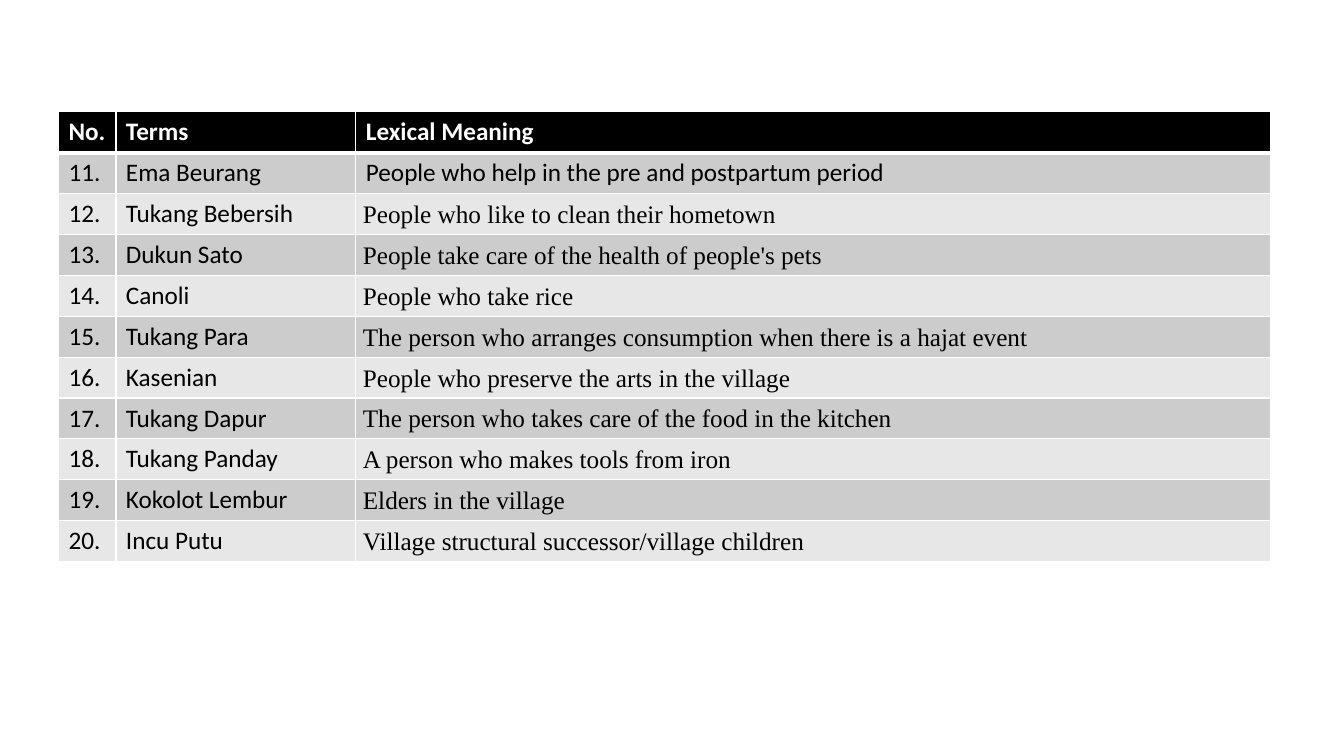
from lxml import etree
from pptx import Presentation
from pptx.dml.color import RGBColor
from pptx.enum.text import MSO_ANCHOR
from pptx.oxml.ns import qn
from pptx.util import Inches, Pt

MIDDLE, TOP = MSO_ANCHOR.MIDDLE, MSO_ANCHOR.TOP
BLACK = RGBColor(0x00, 0x00, 0x00)
WHITE = RGBColor(0xFF, 0xFF, 0xFF)
DARK_BAND = RGBColor(0xCC, 0xCC, 0xCC)
LIGHT_BAND = RGBColor(0xE7, 0xE7, 0xE7)

SLIDE_WIDTH, SLIDE_HEIGHT = Inches(13.33), Inches(7.5)
GLOSSARY_LEFT, GLOSSARY_TOP = Inches(0.58), Inches(1.11)
COLUMN_WIDTHS = [Inches(0.57), Inches(2.38), Inches(9.07)]
GLOSSARY_HEIGHT = Inches(4.46)
FIRST_NUMBER = 11
THIN, THICK = Pt(1), Pt(3)

HEADINGS = ("No.", "Terms", "Lexical Meaning")
GLOSSARY = [
    ("Ema Beurang", "People who help in the pre and postpartum period"),
    ("Tukang Bebersih", "People who like to clean their hometown"),
    ("Dukun Sato", "People take care of the health of people's pets"),
    ("Canoli", "People who take rice"),
    ("Tukang Para", "The person who arranges consumption when there is a hajat event"),
    ("Kasenian", "People who preserve the arts in the village"),
    ("Tukang Dapur", "The person who takes care of the food in the kitchen"),
    ("Tukang Panday", "A person who makes tools from iron"),
    ("Kokolot Lembur", "Elders in the village"),
    ("Incu Putu", "Village structural successor/village children"),
]


def write_text(cell, text, font="Calibri", color=BLACK, bold=False, spacing=None):
    paragraph = cell.text_frame.paragraphs[0]
    paragraph.line_spacing = spacing
    run = paragraph.add_run()
    run.text = text
    run.font.name = font
    run.font.size = Pt(18)
    run.font.bold = bold
    run.font.color.rgb = color


def draw_borders(cell, top=THIN, bottom=THIN):
    properties = cell._tc.get_or_add_tcPr()
    widths = {"a:lnL": THIN, "a:lnR": THIN, "a:lnT": top, "a:lnB": bottom}
    for side, width in widths.items():
        line = etree.SubElement(properties, qn(side), w=str(int(width)))
        fill = etree.SubElement(line, qn("a:solidFill"))
        etree.SubElement(fill, qn("a:srgbClr"), val=str(WHITE))


def style_cell(cell, band, tight=False, **borders):
    draw_borders(cell, **borders)
    cell.fill.solid()
    cell.fill.fore_color.rgb = band
    cell.vertical_anchor = MIDDLE if tight else TOP
    if tight:
        cell.margin_left = cell.margin_right = Inches(0.07)
        cell.margin_top = cell.margin_bottom = 0


def add_heading_row(glossary):
    for column, heading in enumerate(HEADINGS):
        cell = glossary.cell(0, column)
        style_cell(cell, BLACK, bottom=THICK)
        write_text(cell, heading, color=WHITE, bold=True)


def add_term_row(glossary, row, term, meaning):
    band = DARK_BAND if row % 2 else LIGHT_BAND
    top = THICK if row == 1 else THIN
    number = f"{FIRST_NUMBER + row - 1}."
    for column, text in enumerate((number, term, meaning)):
        cell = glossary.cell(row, column)
        serif = column == 2 and row > 1
        style_cell(cell, band, tight=serif, top=top)
        if serif:
            write_text(cell, text, font="Times New Roman", spacing=1.07)
        else:
            write_text(cell, text)


def add_glossary(slide):
    row_count = len(GLOSSARY) + 1
    glossary = slide.shapes.add_table(
        row_count, len(HEADINGS), GLOSSARY_LEFT, GLOSSARY_TOP,
        sum(COLUMN_WIDTHS), GLOSSARY_HEIGHT).table
    for column, width in zip(glossary.columns, COLUMN_WIDTHS):
        column.width = width
    add_heading_row(glossary)
    for row, (term, meaning) in enumerate(GLOSSARY, start=1):
        add_term_row(glossary, row, term, meaning)


def main():
    deck = Presentation()
    deck.slide_width, deck.slide_height = SLIDE_WIDTH, SLIDE_HEIGHT
    slide = deck.slides.add_slide(deck.slide_layouts[6])
    add_glossary(slide)
    deck.save("out.pptx")


if __name__ == "__main__":
    main()
